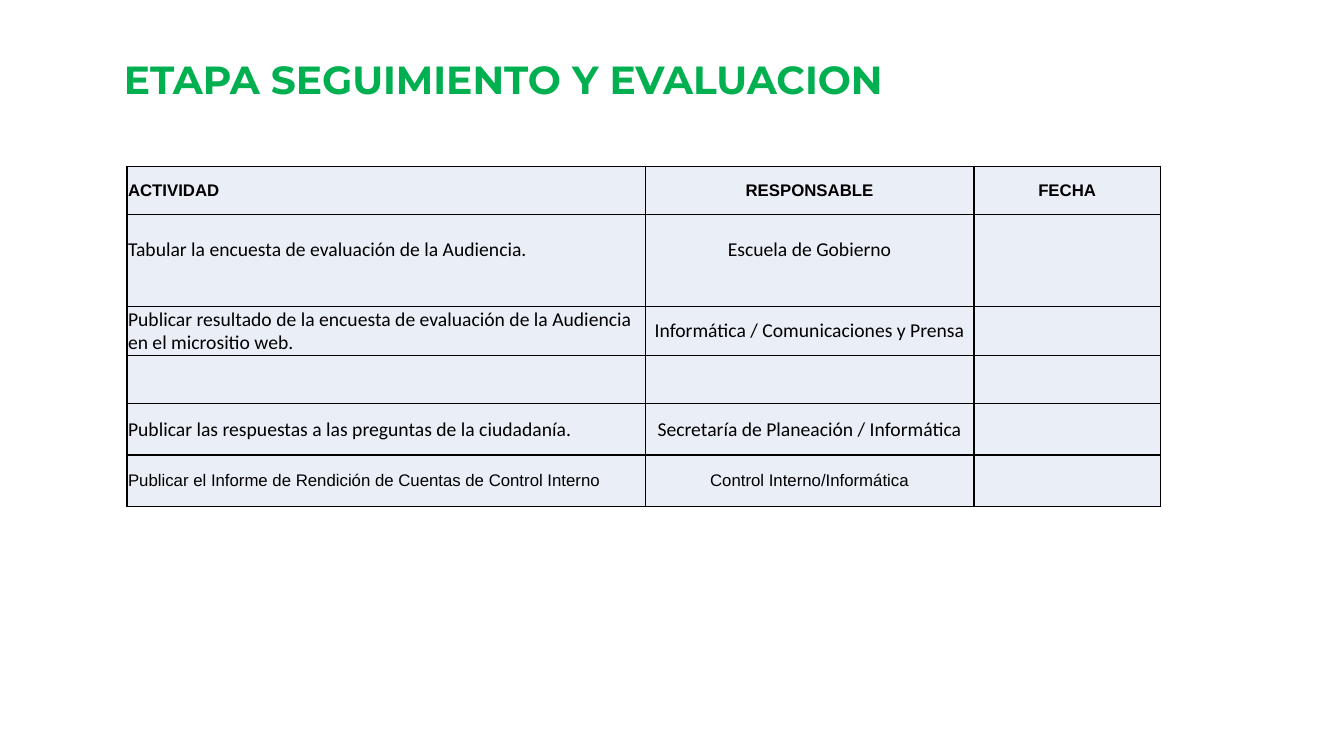
import pptx
import pptx.dml.color
import pptx.enum.text
import pptx.oxml
import pptx.oxml.ns
import pptx.util

Inches = pptx.util.Inches
MIDDLE = pptx.enum.text.MSO_ANCHOR.MIDDLE
CENTER = pptx.enum.text.PP_ALIGN.CENTER


def rgb(value):
    return pptx.dml.color.RGBColor.from_string(value)


def write(p, text, font, size, color, bold):
    p.text = text
    p.font.name = font
    p.font.size = pptx.util.Pt(size)
    p.font.color.rgb = rgb(color)
    p.font.bold = bold


prs = pptx.Presentation()
prs.slide_width, prs.slide_height = Inches(13.33), Inches(7.5)
s = prs.slides.add_slide(prs.slide_layouts[6])

col_widths = [5.14, 3.26, 1.85]
# Height, font, size, bold, cell texts
rows = [
    (0.48, "Arial", 12, True, ["ACTIVIDAD", "RESPONSABLE", "FECHA"]),
    (0.91, "Calibri", 14, False,
     ["Tabular la encuesta de evaluación de la Audiencia.", "Escuela de Gobierno", ""]),
    (0.48, "Calibri", 14, False,
     ["Publicar resultado de la encuesta de evaluación de la Audiencia en el micrositio web.",
      "Informática / Comunicaciones y Prensa", ""]),
    (0.48, "Calibri", 14, False, ["", "", ""]),
    (0.51, "Calibri", 14, False,
     ["Publicar las respuestas a las preguntas de la ciudadanía.",
      "Secretaría de Planeación / Informática", ""]),
    (0.51, "Arial", 12, False,
     ["Publicar el Informe de Rendición de Cuentas de Control Interno",
      "Control Interno/Informática", ""]),
]
tall_row = 1

table = s.shapes.add_table(len(rows), len(col_widths), Inches(1.26), Inches(1.65),
                           Inches(sum(col_widths)), Inches(sum(row[0] for row in rows))).table
for column, width in zip(table.columns, col_widths):
    column.width = Inches(width)

for i, (height, font, size, bold, texts) in enumerate(rows):
    table.rows[i].height = Inches(height)
    for j, text in enumerate(texts):
        cell = table.cell(i, j)
        cell.vertical_anchor = MIDDLE
        cell.margin_left = cell.margin_right = cell.margin_top = Inches(0.01)
        cell.margin_bottom = Inches(0.22 if i == tall_row else 0)
        p = cell.text_frame.paragraphs[0]
        write(p, text, font, size, "000000", bold)
        if j > 0:
            p.alignment = CENTER
        tcPr = cell._tc.get_or_add_tcPr()
        for side in ("lnL", "lnR", "lnT", "lnB"):
            tcPr.append(pptx.oxml.parse_xml(
                f'<a:{side} {pptx.oxml.ns.nsdecls("a")} w="12700"><a:solidFill>'
                f'<a:srgbClr val="000000"/></a:solidFill></a:{side}>'))
        cell.fill.solid()
        cell.fill.fore_color.rgb = rgb("EAEFF7")

title = s.shapes.add_textbox(Inches(1.13), Inches(0.5), Inches(9.06), Inches(0.57))
tf = title.text_frame
tf.word_wrap = True
tf.auto_size = pptx.enum.text.MSO_AUTO_SIZE.SHAPE_TO_FIT_TEXT
write(tf.paragraphs[0], "ETAPA SEGUIMIENTO Y EVALUACION", "Montserrat", 28, "00B050", True)

prs.save("out.pptx")
